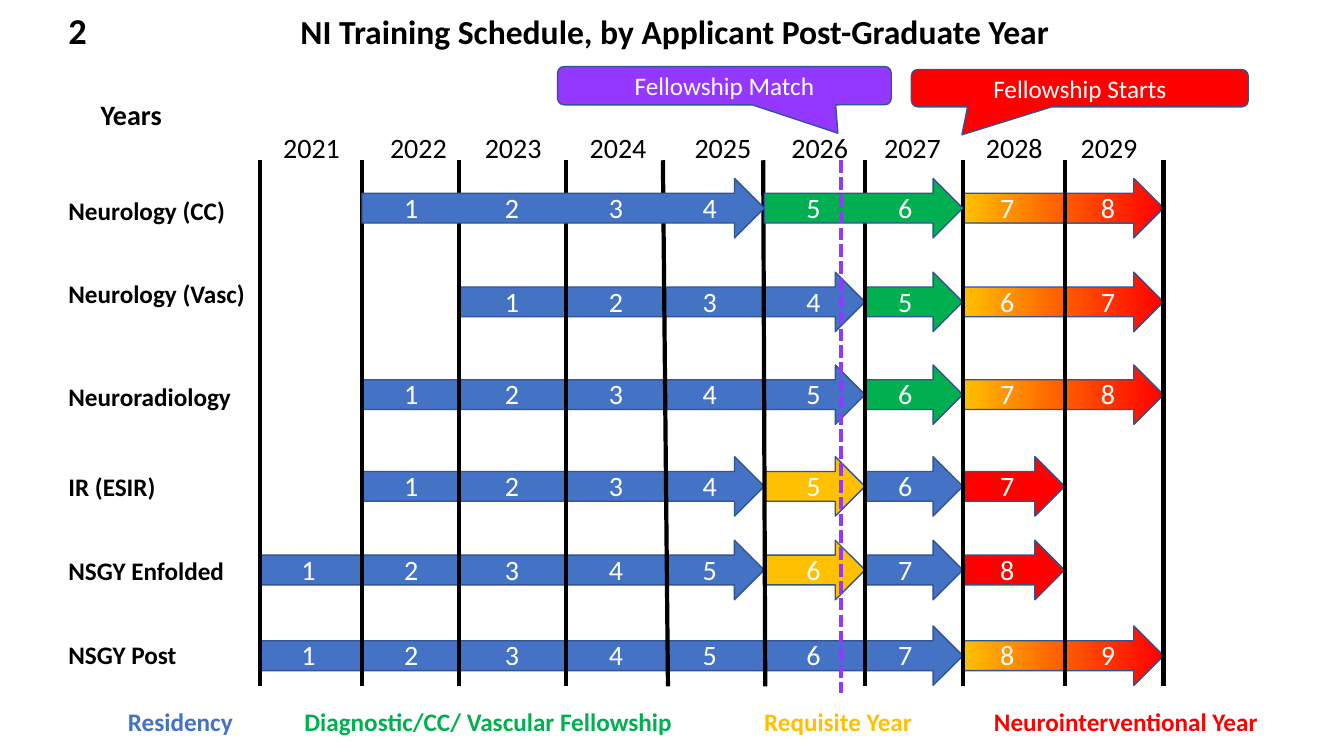
from copy import deepcopy
from collections import namedtuple

from lxml import etree
from pptx import Presentation
from pptx import util as u
from pptx.dml.color import RGBColor
from pptx.enum import dml, shapes, text
from pptx.oxml.ns import qn

FONT = "Calibri"
COLORS = {
    "black": "000000", "white": "FFFFFF", "outline": "325491",
    "residency": "4472C4", "fellowship": "00B050", "requisite": "FFC000",
    "ni": "FF0000", "match": "9437FF", "blend": "FF6000",
}
Box = namedtuple("Box", "left top width height")
Column = namedtuple("Column", "edge year_left number_left")
Track = namedtuple("Track", "name top label_top first_column segments in_front",
                   defaults=(False,))

# Offsets from the top left corner of the timeline, in inches
COLUMNS = [
    Column(0, 0.13, 0.31), Column(1.01, 1.19, 1.33), Column(1.97, 2.13, 2.33),
    Column(3.03, 3.17, 3.36), Column(4.02, 4.21, 4.29), Column(5, 5.17, 5.32),
    Column(6, 6.09, 6.23), Column(6.97, 7.1, 7.24), Column(7.98, 8.04, 8.24),
]
EDGES = [column.edge for column in COLUMNS] + [8.96]
LEANING_EDGES = {4: 0.05, 5: 0.02}
FIRST_YEAR = 2021
ARROW_HEIGHT = 0.59

# Segments are (kind, number of years)
TRACKS = [
    Track("Neurology (CC)", 0.18, 0.3, 1,
          [("residency", 4), ("fellowship", 2), ("gradient", 2)], True),
    Track("Neurology (Vasc)", 1.11, 1.12, 2,
          [("residency", 4), ("fellowship", 1), ("gradient", 2)]),
    Track("Neuroradiology", 2.03, 2.14, 1,
          [("residency", 5), ("fellowship", 1), ("gradient", 2)]),
    Track("IR (ESIR)", 2.94, 3.04, 1,
          [("residency", 4), ("requisite", 1), ("residency", 1), ("ni", 1)]),
    Track("NSGY Enfolded", 3.77, 3.87, 0,
          [("residency", 5), ("requisite", 1), ("residency", 1), ("ni", 1)]),
    Track("NSGY Post", 4.62, 4.7, 0, [("residency", 7), ("gradient", 2)]),
]


def rgb(name):
    return RGBColor.from_string(COLORS[name])


def place(box):
    return [u.Inches(length) for length in box]


def write(frame, runs, size=20, bold=False, align=None, wrap=True):
    """Fill the first paragraph with (text, colour) runs."""
    frame.word_wrap = wrap
    paragraph = frame.paragraphs[0]
    paragraph.alignment = align
    for words, color in runs:
        run = paragraph.add_run()
        run.text = words
        run.font.name = FONT
        run.font.size = u.Pt(size)
        run.font.bold = bold
        run.font.color.rgb = rgb(color)
    return paragraph


def add_text(slide, box, words, color="black", **format):
    frame = slide.shapes.add_textbox(*place(box)).text_frame
    return write(frame, [(words, color)], **format)


def fill_gradient(shape):
    shape.fill.gradient()
    shape.fill.gradient_angle = 0
    stop_list = shape.element.find(".//" + qn("a:gsLst"))
    stop_list.append(deepcopy(stop_list[-1]))
    stops = [(0, "requisite"), (0.48, "blend"), (1, "ni")]
    for stop, (position, color) in zip(shape.fill.gradient_stops, stops):
        stop.position = position
        stop.color.rgb = rgb(color)


def add_outlined(slide, preset, box, fill):
    shape = slide.shapes.add_shape(preset, *place(box))
    shape.shadow.inherit = False
    shape.line.color.rgb = rgb("outline")
    shape.line.width = u.Pt(1)
    if fill == "gradient":
        fill_gradient(shape)
    else:
        shape.fill.solid()
        shape.fill.fore_color.rgb = rgb(fill)
    return shape


def add_line(slide, start, end, color="black", dash=None):
    line = slide.shapes.add_connector(
        shapes.MSO_CONNECTOR.STRAIGHT, *place(start), *place(end))
    line.line.color.rgb = rgb(color)
    line.line.width = u.Pt(3)
    line.line.dash_style = dash
    etree.SubElement(line.element.spPr, qn("a:effectLst"))


def add_callout(slide, box, words, fill, adjustments):
    shape = add_outlined(
        slide, shapes.MSO_SHAPE.ROUNDED_RECTANGULAR_CALLOUT, box, fill)
    for index, value in enumerate(adjustments):
        shape.adjustments[index] = value
    shape.text_frame.vertical_anchor = text.MSO_ANCHOR.MIDDLE
    write(shape.text_frame, [(words, "white")], size=18,
          align=text.PP_ALIGN.CENTER)


def add_header(slide, box):
    title = slide.shapes.title
    title.left, title.top, title.width, title.height = place(
        Box(box.left + 2.3, box.top + 0.03, 7.89, 0.5))
    title.text_frame.vertical_anchor = text.MSO_ANCHOR.TOP
    paragraph = write(
        title.text_frame,
        [("NI Training Schedule, by Applicant Post-Graduate Year", "black")],
        size=24, bold=True, align=text.PP_ALIGN.LEFT, wrap=False)
    paragraph.line_spacing = 1
    paragraph.space_before = u.Pt(0)
    add_text(slide, Box(box.left, box.top, 0.48, 0.54), "2", size=26, bold=True)


def add_arrows(slide, box, track, in_front):
    column = track.first_column
    for kind, years in track.segments:
        if (track.in_front and kind != "gradient") == in_front:
            left, right = EDGES[column], EDGES[column + years]
            arrow = Box(box.left + left, box.top + track.top,
                        right - left, ARROW_HEIGHT)
            add_outlined(slide, shapes.MSO_SHAPE.RIGHT_ARROW, arrow, kind)
        column += years


def add_track_text(slide, box, track):
    add_text(slide, Box(box.left - 2, box.top + track.label_top, 1.96, 0.4),
             track.name, size=18, bold=True, wrap=False)
    total = sum(years for _, years in track.segments)
    columns = COLUMNS[track.first_column:track.first_column + total]
    for number, column in enumerate(columns, start=1):
        add_text(slide, Box(box.left + column.number_left,
                            box.top + track.top + 0.07, 0.3, 0.44),
                 str(number), "white")


def add_timeline(slide, box):
    for track in TRACKS:
        add_arrows(slide, box, track, in_front=False)
    bottom = box.top + box.height
    for index, edge in enumerate(EDGES):
        left, lean = box.left + edge, LEANING_EDGES.get(index, 0)
        add_line(slide, (left - lean / 2, box.top), (left + lean / 2, bottom))
    for track in TRACKS:
        add_arrows(slide, box, track, in_front=True)
        add_track_text(slide, box, track)
    add_text(slide, Box(box.left - 1.68, box.top - 0.67, 1.04, 0.44),
             "Years", bold=True)
    for year, column in enumerate(COLUMNS, start=FIRST_YEAR):
        add_text(slide, Box(box.left + column.year_left, box.top - 0.34,
                            0.89, 0.44), str(year))
    match_left = box.left + 5.76
    add_line(slide, (match_left, box.top), (match_left, bottom + 0.07),
             "match", dml.MSO_LINE.SQUARE_DOT)


def add_legend(slide, box):
    frame = slide.shapes.add_textbox(*place(box)).text_frame
    paragraph = write(frame, [
        ("Residency\t", "residency"),
        ("Diagnostic/CC/ Vascular Fellowship\t", "fellowship"),
        ("Requisite Year\t", "requisite"),
        ("Neurointerventional Year", "ni"),
    ], size=18, bold=True)
    properties = paragraph._p.get_or_add_pPr()
    tab_list = etree.SubElement(properties, qn("a:tabLst"))
    for position in (1.75, 6.31, 8.59):
        etree.SubElement(tab_list, qn("a:tab"),
                         pos=str(u.Inches(position)), algn="l")


def main():
    presentation = Presentation()
    presentation.slide_width = u.Inches(13.33)
    presentation.slide_height = u.Inches(7.5)
    slide = presentation.slides.add_slide(presentation.slide_layouts[5])
    add_header(slide, Box(0.58, 0.03, 10.19, 0.54))
    add_timeline(slide, Box(2.58, 1.59, 8.96, 5.22))
    add_callout(slide, Box(5.53, 0.66, 3.31, 0.38), "Fellowship Match",
                "match", (0.34, 1.24, 0.17))
    add_callout(slide, Box(9.04, 0.69, 3.34, 0.37), "Fellowship Starts",
                "ni", (-0.35, 1.25, 0.17))
    add_legend(slide, Box(1.17, 6.96, 12.04, 0.4))
    presentation.save("out.pptx")


if __name__ == "__main__":
    main()
